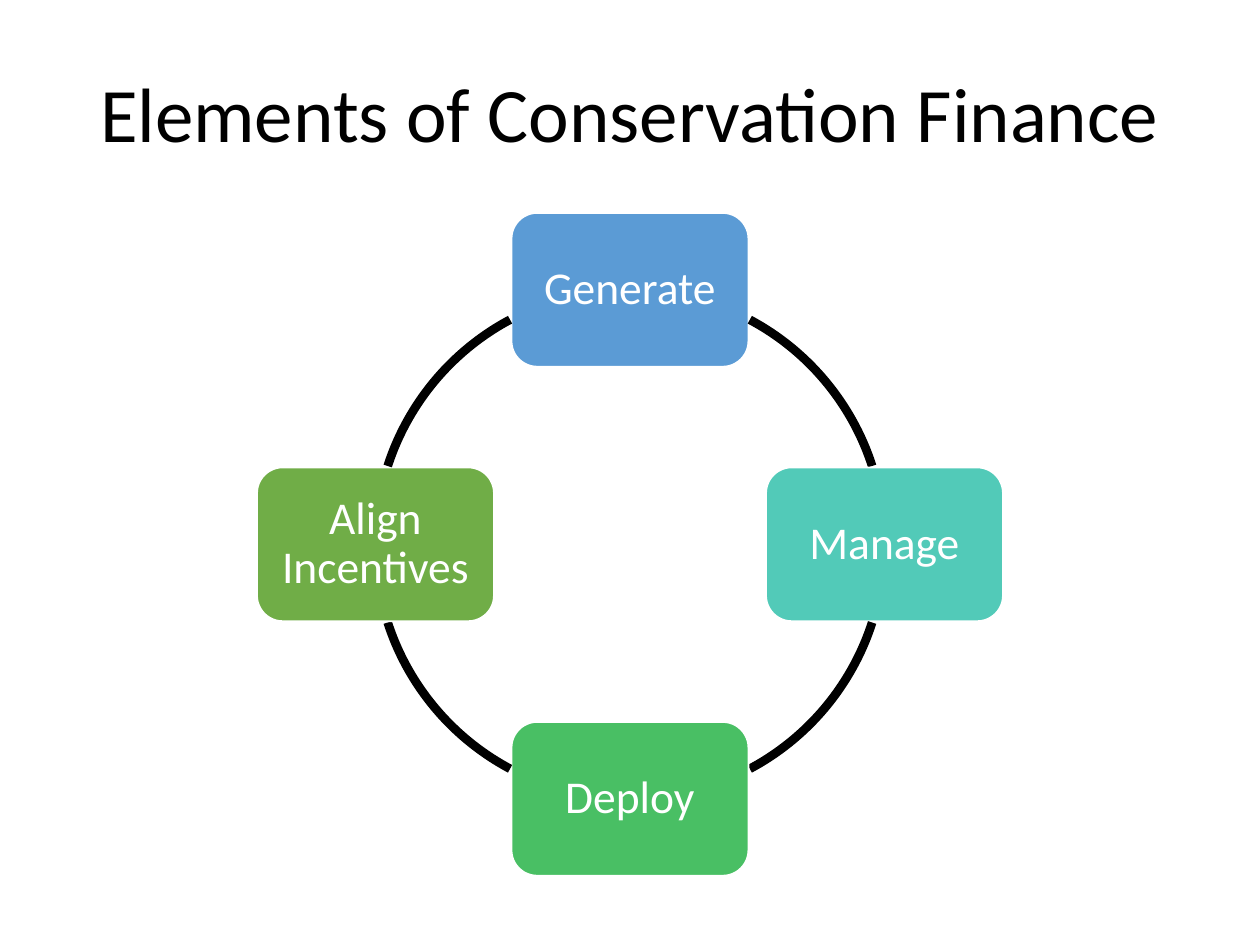
import math

import pptx
import pptx.dml.color
import pptx.enum.shapes
import pptx.enum.text
import pptx.util
from pptx.dml.color import RGBColor
from pptx.util import Inches

BLACK = RGBColor(0x00, 0x00, 0x00)
WHITE = RGBColor(0xFF, 0xFF, 0xFF)
BLUE = RGBColor(0x5B, 0x9B, 0xD5)
TEAL = RGBColor(0x52, 0xCA, 0xB8)
GREEN = RGBColor(0x49, 0xBF, 0x64)
OLIVE = RGBColor(0x70, 0xAD, 0x47)

STEPS = [
    ("Generate", BLUE),
    ("Manage", TEAL),
    ("Deploy", GREEN),
    ("Align Incentives", OLIVE),
]
CENTER_X, CENTER_Y, RADIUS = 5, 4.32, 2.02
BOX_WIDTH, BOX_HEIGHT = 1.88, 1.22
# Clockwise degrees from the three o'clock position, for the lower right arc
ARC_START, ARC_END = 17.9, 61.9


def format_text(frame, text, size, color):
    frame.word_wrap = True
    frame.vertical_anchor = pptx.enum.text.MSO_ANCHOR.MIDDLE
    para = frame.paragraphs[0]
    para.text = text
    para.alignment = pptx.enum.text.PP_ALIGN.CENTER
    para.line_spacing = 0.9
    para.font.name = "Calibri"
    para.font.size = pptx.util.Pt(size)
    para.font.color.rgb = color


def set_title(slide, text):
    title = slide.shapes.title
    title.left, title.top = Inches(0.69), Inches(0.4)
    title.width, title.height = Inches(8.62), Inches(1.07)
    format_text(title.text_frame, text, 44, BLACK)


def add_step(slide, text, color, angle):
    """Add a rounded box centred on the ring at a clockwise angle."""
    x = CENTER_X + RADIUS * math.cos(math.radians(angle))
    y = CENTER_Y + RADIUS * math.sin(math.radians(angle))
    box = slide.shapes.add_shape(
        pptx.enum.shapes.MSO_SHAPE.ROUNDED_RECTANGLE,
        Inches(x - BOX_WIDTH / 2), Inches(y - BOX_HEIGHT / 2),
        Inches(BOX_WIDTH), Inches(BOX_HEIGHT))
    box.shadow.inherit = False
    box.fill.solid()
    box.fill.fore_color.rgb = color
    box.line.color.rgb = WHITE
    box.line.width = pptx.util.Pt(1)
    frame = box.text_frame
    frame.margin_left = frame.margin_right = Inches(0.11)
    frame.margin_top = frame.margin_bottom = Inches(0.11)
    format_text(frame, text, 26, WHITE)


def add_arc(slide, start, end):
    """Add a part of the ring between two clockwise angles."""
    arc = slide.shapes.add_shape(
        pptx.enum.shapes.MSO_SHAPE.ARC,
        Inches(CENTER_X - RADIUS), Inches(CENTER_Y - RADIUS),
        Inches(2 * RADIUS), Inches(2 * RADIUS))
    arc.shadow.inherit = False
    arc.fill.background()
    arc.line.color.rgb = BLACK
    arc.line.width = pptx.util.Pt(5)
    # Angles are stored in 1/60000 degree, adjustments scale by 100000
    for index, angle in enumerate((start, end)):
        arc.adjustments[index] = angle % 360 * 0.6


def main():
    deck = pptx.Presentation()
    deck.slide_width, deck.slide_height = Inches(10), Inches(7.5)
    slide = deck.slides.add_slide(deck.slide_layouts.get_by_name("Title Only"))
    set_title(slide, "Elements of Conservation Finance")
    for index, (text, color) in enumerate(STEPS):
        angle = 90 * index - 90
        add_step(slide, text, color, angle)
        # Boxes are wider than tall, so arcs mirror from one quadrant to the next
        if index % 2:
            add_arc(slide, angle + ARC_START, angle + ARC_END)
        else:
            add_arc(slide, angle + 90 - ARC_END, angle + 90 - ARC_START)
    deck.save("out.pptx")


if __name__ == "__main__":
    main()
